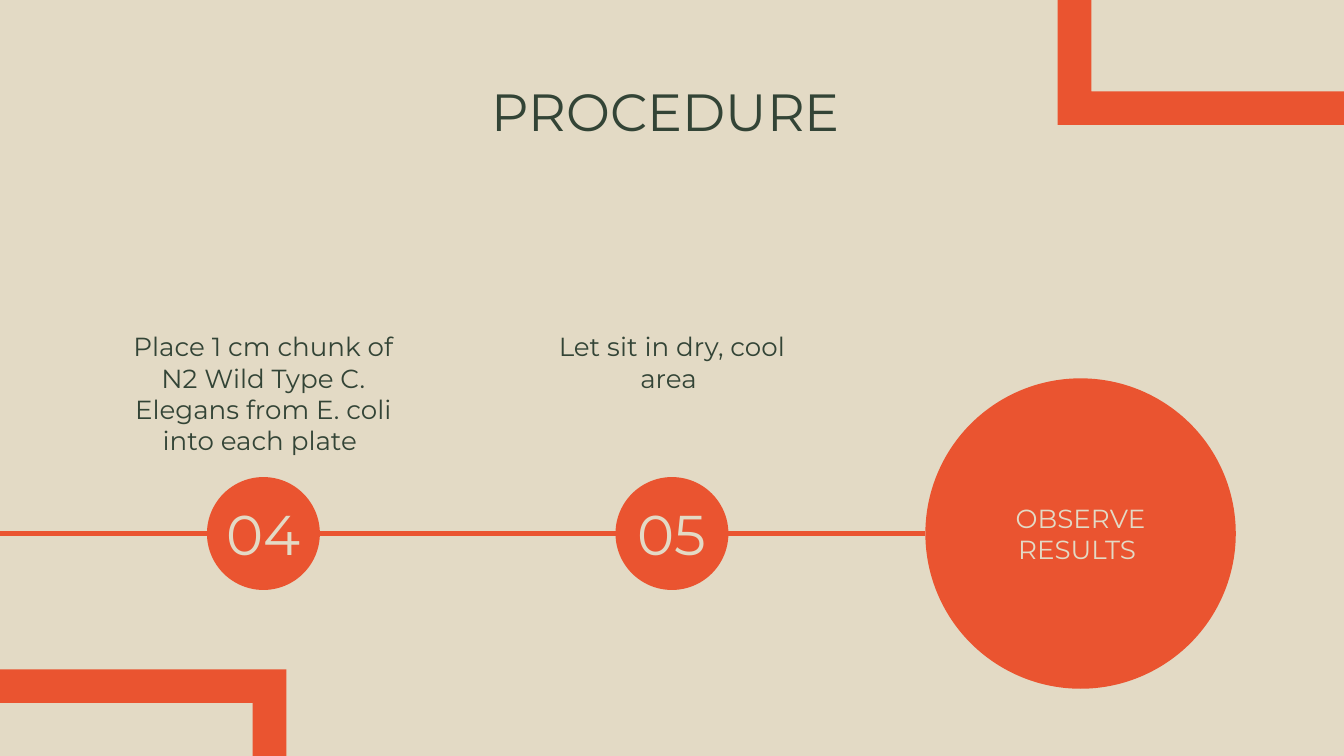
"""Build the procedure timeline slide."""
from dataclasses import dataclass

from lxml import etree
from pptx import Presentation
from pptx.dml.color import RGBColor
from pptx.enum.shapes import MSO_CONNECTOR, MSO_SHAPE
from pptx.enum.text import MSO_ANCHOR, PP_ALIGN
from pptx.oxml.ns import qn
from pptx.util import Inches, Pt

OVAL = MSO_SHAPE.OVAL
STRAIGHT = MSO_CONNECTOR.STRAIGHT
CENTER = PP_ALIGN.CENTER
TOP, MIDDLE = MSO_ANCHOR.TOP, MSO_ANCHOR.MIDDLE

COLORS = {"sand": "E3DAC5", "orange": "EA5430", "green": "334436"}
FONT = "Montserrat"
WIDTH = 10
HEIGHT = WIDTH * 9 / 16
MIDDLE_COLUMN, COLUMN_STEP = WIDTH / 2, 3.04
TIMELINE_Y = 3.97
TIMELINE_START = -0.12
FRAME_WIDTH, FRAME_HEIGHT, FRAME_BAND = 4.08, 4.38, 0.25
CAPTION_TOP, CAPTION_WIDTH, CAPTION_HEIGHT = 2.36, 2.33, 1.08


@dataclass(frozen=True)
class Stop:
    column: int
    diameter: float
    label: str
    size: int
    inset: float
    caption: str = ""

    @property
    def center(self) -> float:
        return MIDDLE_COLUMN + (self.column - 1) * COLUMN_STEP

    @property
    def left(self) -> float:
        return self.center - self.diameter / 2

    @property
    def right(self) -> float:
        return self.center + self.diameter / 2


@dataclass(frozen=True)
class Frame:
    left: float
    top: float


STOPS = [
    Stop(0, 0.84, "04", 30, 0.1,
         "Place 1 cm chunk of N2 Wild Type C. Elegans from E. coli into each plate "),
    Stop(1, 0.84, "05", 30, 0.1, "Let sit in dry, cool area "),
    Stop(2, 2.31, "OBSERVE RESULTS ", 14, 0),
]
FRAMES = [Frame(-1.95, 4.98), Frame(7.87, 0.93 - FRAME_HEIGHT)]


def color(name: str) -> RGBColor:
    return RGBColor.from_string(COLORS[name])


def write_text(shape, text: str, *, size: int, ink: str, anchor=TOP,
               side: float = 0.1, top: float = 0.1, bottom: float = 0.1) -> None:
    frame = shape.text_frame
    frame.word_wrap = True
    frame.vertical_anchor = anchor
    frame.margin_left = frame.margin_right = Inches(side)
    frame.margin_top, frame.margin_bottom = Inches(top), Inches(bottom)
    para = frame.paragraphs[0]
    para.alignment = CENTER
    span = para.add_run()
    span.text = text
    span.font.name = FONT
    span.font.size = Pt(size)
    span.font.color.rgb = color(ink)


def paint(shape) -> None:
    shape.shadow.inherit = False
    shape.fill.solid()
    shape.fill.fore_color.rgb = color("orange")
    shape.line.fill.background()


def add_box(page, left: float, top: float, width: float, height: float):
    return page.shapes.add_textbox(Inches(left), Inches(top), Inches(width), Inches(height))


def draw_frame(page, frame: Frame) -> None:
    left, top = Inches(frame.left), Inches(frame.top)
    right, bottom = left + Inches(FRAME_WIDTH), top + Inches(FRAME_HEIGHT)
    band = Inches(FRAME_BAND)
    outer = [(left, top), (right, top), (right, bottom), (left, bottom)]
    inner = [(left + band, top + band), (left + band, bottom - band),
             (right - band, bottom - band), (right - band, top + band)]
    builder = page.shapes.build_freeform(*outer[0])
    builder.add_line_segments(outer[1:], close=True)
    builder.move_to(*inner[0])
    builder.add_line_segments(inner[1:], close=True)
    paint(builder.convert_to_shape())


def draw_stop(page, stop: Stop) -> None:
    if stop.caption:
        box = add_box(page, stop.center - CAPTION_WIDTH / 2, CAPTION_TOP,
                      CAPTION_WIDTH, CAPTION_HEIGHT)
        write_text(box, stop.caption, size=14, ink="green", bottom=0)
    circle = page.shapes.add_shape(
        OVAL, Inches(stop.left), Inches(TIMELINE_Y - stop.diameter / 2),
        Inches(stop.diameter), Inches(stop.diameter))
    paint(circle)
    write_text(circle, stop.label, size=stop.size, ink="sand", anchor=MIDDLE,
               side=0, top=stop.inset, bottom=stop.inset)


def draw_segment(page, start: float, end: float) -> None:
    line = page.shapes.add_connector(
        STRAIGHT, Inches(start), Inches(TIMELINE_Y), Inches(end), Inches(TIMELINE_Y))
    line.line.color.rgb = color("orange")
    line.line.width = Pt(3)
    etree.SubElement(line._element.spPr, qn("a:effectLst"))


def main() -> None:
    deck = Presentation()
    deck.slide_width, deck.slide_height = Inches(WIDTH), Inches(HEIGHT)
    page = deck.slides.add_slide(deck.slide_layouts[6])
    page.background.fill.solid()
    page.background.fill.fore_color.rgb = color("sand")
    for frame in FRAMES:
        draw_frame(page, frame)
    title = add_box(page, 0.79, 0.49, 8.43, 0.63)
    write_text(title, "PROCEDURE ", size=28, ink="green")
    for stop in STOPS:
        draw_stop(page, stop)
    starts = [TIMELINE_START] + [stop.right for stop in STOPS[:-1]]
    for start, stop in zip(starts, STOPS):
        draw_segment(page, start, stop.left)
    deck.save("out.pptx")


if __name__ == "__main__":
    main()
